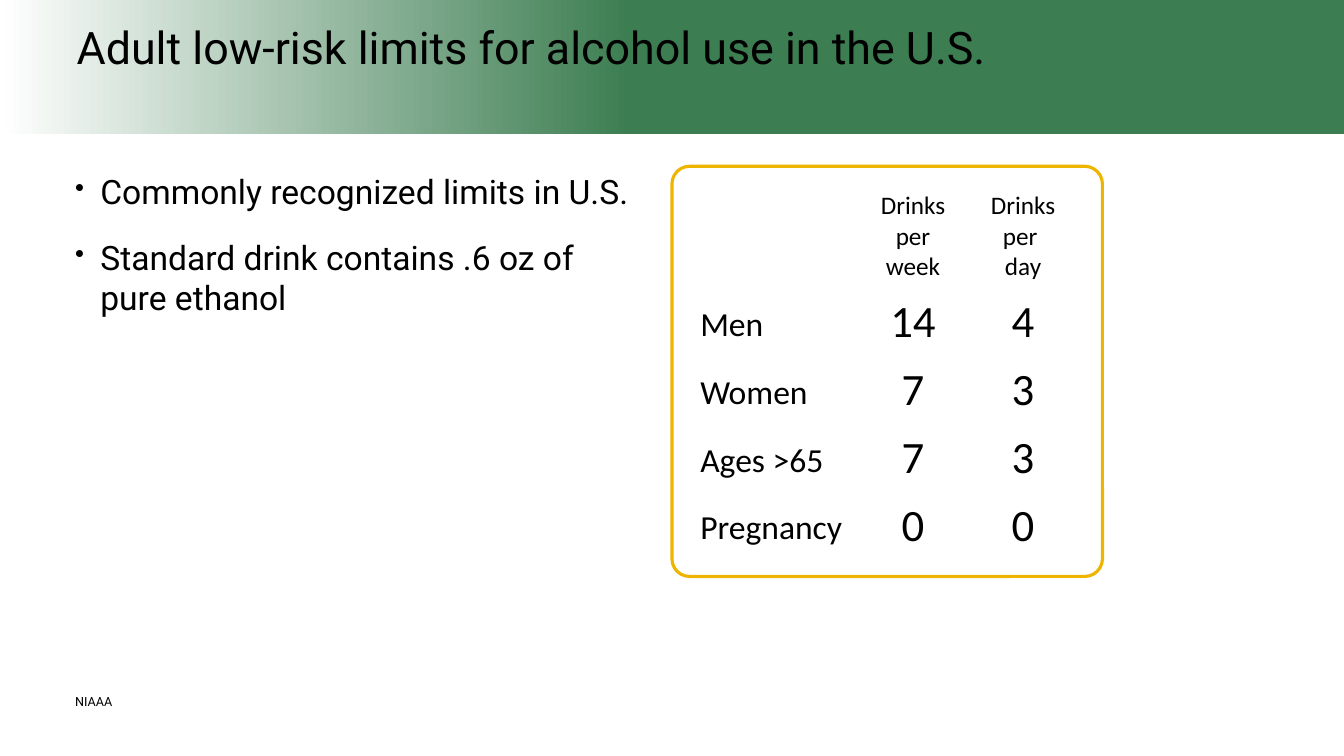
from lxml.etree import SubElement
from pptx import Presentation
from pptx.dml.color import RGBColor
from pptx.enum.shapes import MSO_CONNECTOR, MSO_SHAPE
from pptx.enum.text import MSO_ANCHOR, MSO_AUTO_SIZE, PP_ALIGN
from pptx.oxml.ns import qn
from pptx.util import Pt

BLACK = RGBColor(0x00, 0x00, 0x00)
WHITE = RGBColor(0xFF, 0xFF, 0xFF)
GREEN = RGBColor(0x3C, 0x7D, 0x51)
GOLD = RGBColor(0xEE, 0xB5, 0x00)

TITLE = {"name": "Roboto", "size": Pt(32)}
BODY = {"name": "Roboto", "size": Pt(24)}
SOURCE = {"name": "Roboto", "size": Pt(9)}
HEADING = {"name": "Calibri", "size": Pt(18)}
LABEL = {"name": "Calibri", "size": Pt(24)}
NUMBER = {"name": "Calibri", "size": Pt(32)}


def write(shape, text, font_format, align=PP_ALIGN.LEFT):
    frame = shape.text_frame
    frame.word_wrap = True
    frame.auto_size = MSO_AUTO_SIZE.NONE
    frame.vertical_anchor = MSO_ANCHOR.TOP
    frame.text = text
    for paragraph in frame.paragraphs:
        paragraph.alignment = align
        for name, value in font_format.items():
            setattr(paragraph.font, name, value)
        paragraph.font.color.rgb = BLACK
    return frame


def add_cell(left, top, width, height, text, font_format, align=PP_ALIGN.LEFT):
    box = slide.shapes.add_textbox(Pt(left), Pt(top), Pt(width), Pt(height))
    frame = write(box, text, font_format, align)
    for side in ("left", "top", "right", "bottom"):
        setattr(frame, f"margin_{side}", 0)


presentation = Presentation()
presentation.slide_width, presentation.slide_height = Pt(960), Pt(540)
slide = presentation.slides.add_slide(presentation.slide_layouts[5])

# Header band, placed behind the title
band = slide.shapes.add_shape(MSO_SHAPE.RECTANGLE, 0, 0, Pt(960), Pt(96))
band.shadow.inherit = False
band.line.fill.background()
band.fill.gradient()
band.fill.gradient_angle = 0
for stop, color, position in zip(band.fill.gradient_stops, (WHITE, GREEN), (0, 0.47)):
    stop.color.rgb = color
    stop.position = position
title = slide.shapes.title
title.element.addprevious(band.element)

# Title
title.left, title.top, title.width, title.height = Pt(47.5), Pt(10.8), Pt(779), Pt(46)
write(title, "Adult low-risk limits for alcohol use in the U.S.", TITLE)

# Source note
source = slide.shapes.add_textbox(Pt(46.6), Pt(491.8), Pt(218), Pt(18))
write(source, "NIAAA", SOURCE)

# Limits panel
panel = slide.shapes.add_shape(
    MSO_SHAPE.ROUNDED_RECTANGLE, Pt(480), Pt(118.8), Pt(307.5), Pt(293))
panel.adjustments[0] = 0.043
panel.shadow.inherit = False
panel.fill.background()
panel.line.color.rgb = GOLD
panel.line.width = Pt(2.25)

# Column headings
column_centers = (652.2, 730.8)
for center, heading in zip(column_centers, ("Drinks per week", "Drinks per \nday")):
    add_cell(center - 28.8, 135.4, 57.6, 65.5, heading, HEADING, PP_ALIGN.CENTER)

# Rows of limits with separators between them
limits = [("Men", 14, 4), ("Women", 7, 3), ("Ages >65", 7, 3), ("Pregnancy", 0, 0)]
for row, (group, *numbers) in enumerate(limits):
    offset = row * 48.4
    add_cell(500.2, 216.5 + offset, 109, 29, group, LABEL)
    for center, number in zip(column_centers, numbers):
        add_cell(center - 19.5, 209.4 + offset, 39, 39, str(number), NUMBER, PP_ALIGN.CENTER)
    if row < len(limits) - 1:
        y = Pt(247.7 + offset)
        separator = slide.shapes.add_connector(
            MSO_CONNECTOR.STRAIGHT, Pt(500.2), y, Pt(760.3), y)
        separator.line.color.rgb = WHITE
        separator.line.width = Pt(0.75)
        SubElement(separator.element.spPr, qn("a:effectLst"))

# Bulleted notes
notes = slide.shapes.add_textbox(Pt(46.6), Pt(118.8), Pt(414.5), Pt(113))
frame = write(notes, "Commonly recognized limits in U.S.\n"
              "Standard drink contains .6 oz of pure ethanol", BODY)
for paragraph in frame.paragraphs:
    paragraph.space_after = Pt(18)
    properties = paragraph._p.get_or_add_pPr()
    properties.set("marL", str(Pt(18)))
    properties.set("indent", str(-Pt(18)))
    bullet_size = SubElement(properties, qn("a:buSzPct"), val="80000")
    bullet = SubElement(properties, qn("a:buChar"), char="•")
    default_run = properties.find(qn("a:defRPr"))
    if default_run is not None:
        properties.append(default_run)

presentation.save("out.pptx")
